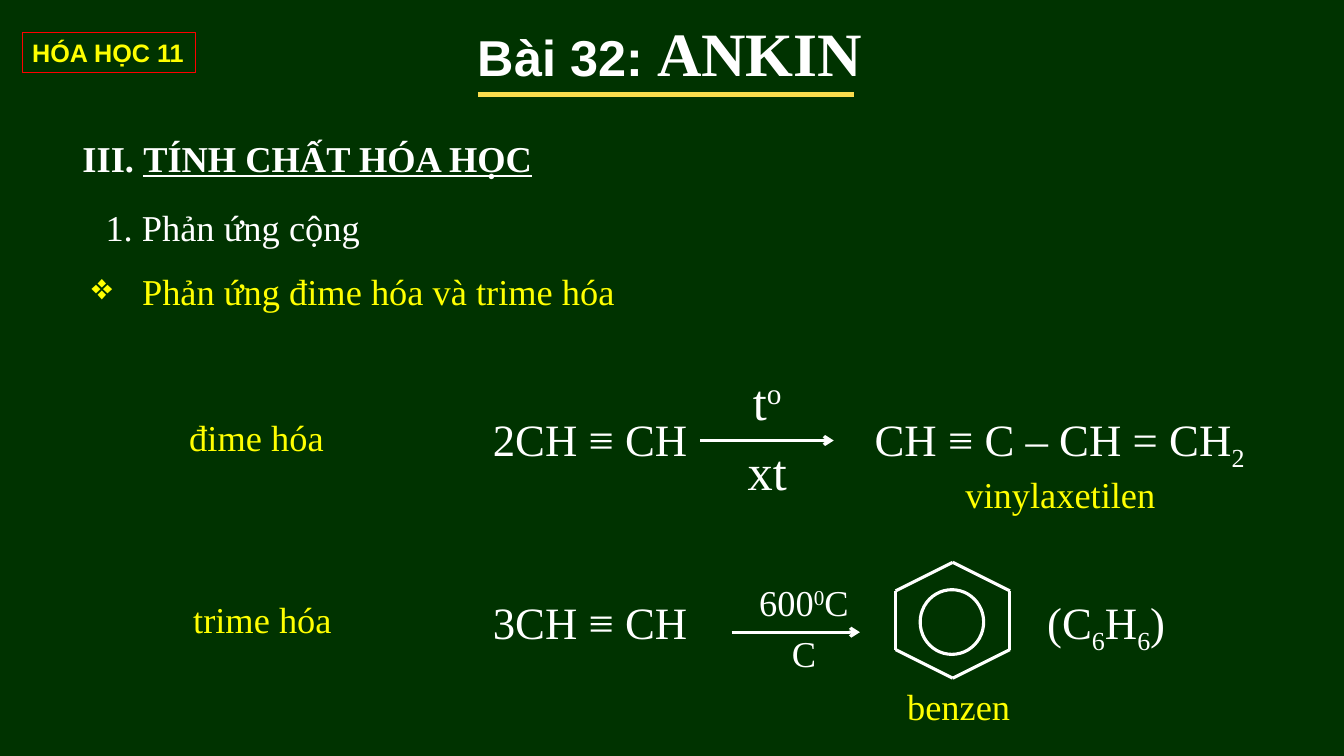
from dataclasses import dataclass

from lxml.etree import SubElement
from pptx import Presentation
from pptx.dml.color import RGBColor
from pptx.enum.shapes import MSO_CONNECTOR as Link, MSO_SHAPE as Form
from pptx.enum.text import MSO_ANCHOR as Anchor, MSO_AUTO_SIZE as Fit, PP_ALIGN as Align
from pptx.oxml.ns import qn
from pptx.shapes.base import BaseShape
from pptx.shapes.connector import Connector
from pptx.shapes.shapetree import _BaseGroupShapes as Tree
from pptx.text.text import TextFrame
from pptx.util import Cm, Pt

GREEN = RGBColor(0x00, 0x33, 0x00)
WHITE = RGBColor(0xFF, 0xFF, 0xFF)
YELLOW = RGBColor(0xFF, 0xFF, 0x00)
RED = RGBColor(0xFF, 0x00, 0x00)
GOLD = RGBColor(0xFA, 0xDD, 0x4D)
SERIF = "Times New Roman"
SANS = "Arial"
SUB = -25000
SUPER = 30000


@dataclass(frozen=True)
class Part:
    text: str
    base: int = 0
    size: float = 0
    face: str = SERIF
    under: bool = False


@dataclass(frozen=True)
class Label:
    left: float
    top: float
    width: float
    height: float
    lines: list[list[Part]]
    size: float = 26
    color: RGBColor = WHITE
    bold: bool = False
    wrap: bool = False
    grow: bool = True
    center: bool = False
    bullet: str = ""


@dataclass(frozen=True)
class Stroke:
    start: tuple[float, float]
    end: tuple[float, float]
    color: RGBColor = WHITE
    width: float = 2.25
    arrow: bool = False


BADGE = Label(0.56, 0.81, 4.37, 1.02, [[Part("HÓA HỌC 11", face=SANS)]],
              size=18, color=YELLOW, bold=True)

LABELS = [
    Label(11.79, 0.25, 10.29, 2.13,
          [[Part("Bài 32: ", face=SANS), Part("ANKIN", size=44)]], size=36, bold=True),
    Label(1.83, 3.3, 11.94, 1.37,
          [[Part("III. "), Part("TÍNH CHẤT HÓA HỌC", under=True)]], bold=True),
    Label(2.41, 5.05, 6.99, 1.37, [[Part("1. Phản ứng cộng")]]),
    Label(2.06, 6.65, 13.82, 1.37, [[Part("Phản ứng đime hóa và trime hóa")]],
          color=YELLOW, bullet="❖"),
    Label(4.52, 10.34, 3.94, 1.37, [[Part("đime hóa")]], color=YELLOW),
    Label(12.17, 10.26, 7.49, 3, [[Part("2CH ≡ CH")]], size=32, wrap=True),
    Label(17.25, 9.19, 4.17, 3.38, [[Part("t"), Part("o", SUPER)], [Part("xt")]],
          size=36, wrap=True, grow=False, center=True),
    Label(20.47, 10.24, 12.47, 1.63, [[Part("CH ≡ C – CH = CH"), Part("2", SUB)]],
          size=32, wrap=True, center=True),
    Label(24.08, 11.76, 5.87, 1.27, [[Part("vinylaxetilen")]],
          color=YELLOW, wrap=True, grow=False),
    Label(4.62, 14.91, 4.04, 1.37, [[Part("trime hóa")]], color=YELLOW),
    Label(12.17, 14.86, 5.79, 2.03, [[Part("3CH ≡ CH")]],
          size=32, wrap=True, grow=False),
    Label(18.24, 14.5, 4.04, 2.29,
          [[Part("600"), Part("0", SUPER), Part("C")], [Part("C")]],
          wrap=True, grow=False, center=True),
    Label(22.61, 17.12, 3.35, 1.52, [[Part("benzen")]],
          color=YELLOW, wrap=True, grow=False),
    Label(26.14, 14.86, 7.26, 1.27,
          [[Part("(C"), Part("6", SUB), Part("H"), Part("6", SUB), Part(")")]],
          size=32, wrap=True, grow=False),
]

STROKES = [
    Stroke((12.04, 2.39), (21.51, 2.39), GOLD, 3.5),
    Stroke((17.65, 11.1), (21.01, 11.1), arrow=True),
    Stroke((18.44, 15.93), (21.67, 15.93), arrow=True),
]


def write(frame: TextFrame, label: Label) -> None:
    frame.word_wrap = label.wrap
    frame.auto_size = Fit.SHAPE_TO_FIT_TEXT if label.grow else Fit.NONE
    frame.vertical_anchor = Anchor.TOP
    for num, line in enumerate(label.lines):
        para = frame.add_paragraph() if num else frame.paragraphs[0]
        para.alignment = Align.CENTER if label.center else Align.LEFT
        if num:
            para.space_before = Pt(label.size * 0.2)
        if label.bullet:
            props = para._p.get_or_add_pPr()
            props.set("marL", str(Cm(1.27)))
            props.set("indent", str(-Cm(1.27)))
            SubElement(props, qn("a:buChar")).set("char", label.bullet)
        for part in line:
            run = para.add_run()
            run.text = part.text
            font = run.font
            font.name = part.face
            font.size = Pt(part.size or label.size)
            font.bold = label.bold
            font.color.rgb = label.color
            if part.under:
                font.underline = True
            if part.base:
                font._element.set("baseline", str(part.base))


def place(tree: Tree, label: Label) -> None:
    box = tree.add_textbox(Cm(label.left), Cm(label.top), Cm(label.width), Cm(label.height))
    write(box.text_frame, label)


def draw(tree: Tree, stroke: Stroke) -> Connector:
    line = tree.add_connector(Link.STRAIGHT, *map(Cm, stroke.start + stroke.end))
    line.line.color.rgb = stroke.color
    line.line.width = Pt(stroke.width)
    if stroke.arrow:
        SubElement(line.line._get_or_add_ln(), qn("a:tailEnd")).set("type", "arrow")
    SubElement(line._element.spPr, qn("a:effectLst"))
    return line


def outline(tree: Tree, form: Form, area: tuple[float, float, float, float],
            color: RGBColor, width: float) -> BaseShape:
    shape = tree.add_shape(form, *map(Cm, area))
    shape.shadow.inherit = False
    shape.fill.background()
    shape.line.color.rgb = color
    shape.line.width = Pt(width)
    return shape


def add_ring(tree: Tree, mid: float, level: float) -> None:
    half, tall, side = 1.44, 1.46, 0.74
    spots = [(0, -tall), (half, -side), (half, side), (0, tall), (-half, side), (-half, -side)]
    points = [(mid + across, level + down) for across, down in spots]
    group = tree.add_group_shape().shapes
    for start, end in zip(points, points[1:] + points[:1]):
        draw(group, Stroke(start, end))
    outline(group, Form.OVAL, (mid - 0.82, level - 0.77, 1.6, 1.63), WHITE, 2.25)


def main() -> None:
    deck = Presentation()
    deck.slide_width, deck.slide_height = Cm(33.87), Cm(19.05)
    slide = deck.slides.add_slide(deck.slide_layouts[6])
    slide.background.fill.solid()
    slide.background.fill.fore_color.rgb = GREEN
    tree = slide.shapes
    area = (BADGE.left, BADGE.top, BADGE.width, BADGE.height)
    write(outline(tree, Form.RECTANGLE, area, RED, 0.75).text_frame, BADGE)
    for label in LABELS:
        place(tree, label)
    for stroke in STROKES:
        draw(tree, stroke)
    add_ring(tree, 24.01, 15.63)
    deck.save("out.pptx")


if __name__ == "__main__":
    main()
